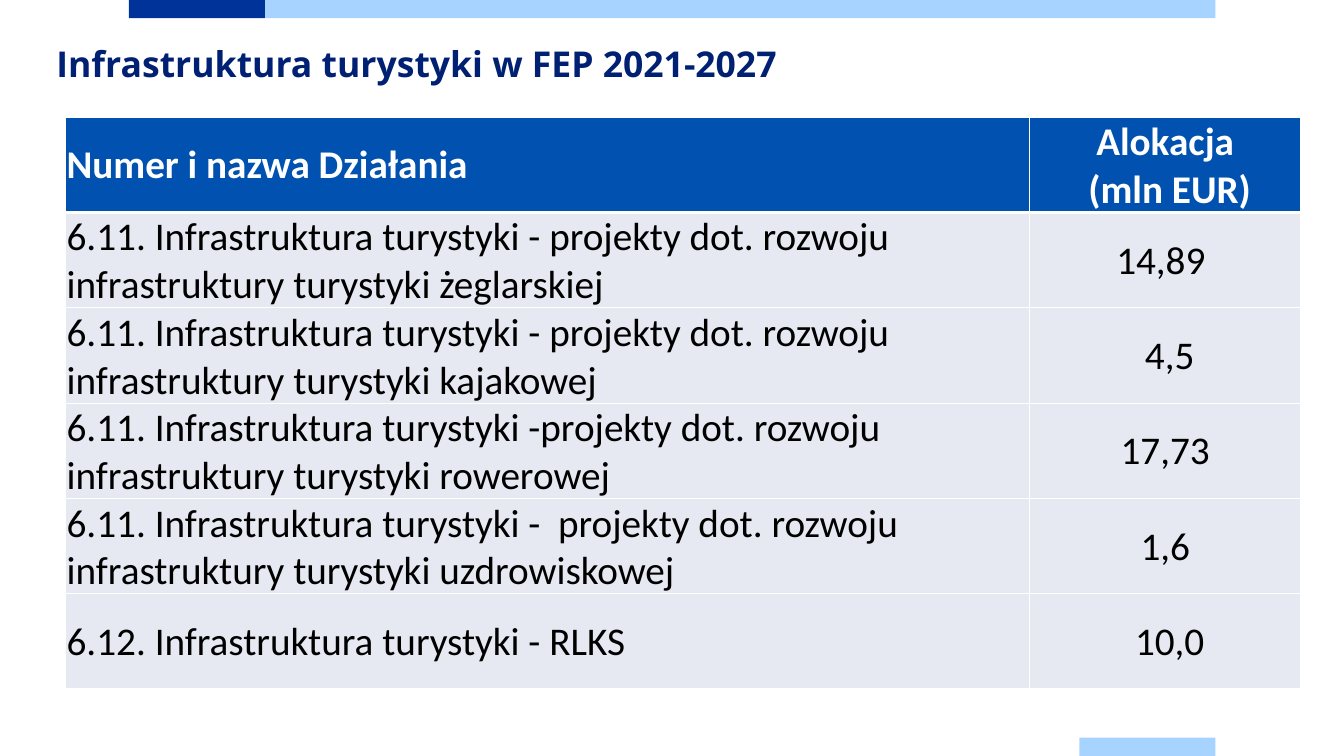
from dataclasses import dataclass

from lxml.etree import SubElement
from pptx import Presentation
from pptx.dml.color import RGBColor
from pptx.enum.shapes import MSO_SHAPE
from pptx.enum.text import MSO_ANCHOR as Anchor, PP_ALIGN as Align
from pptx.oxml.ns import qn
from pptx.slide import Slide
from pptx.table import _Cell as Cell
from pptx.util import Cm, Pt

NAVY, SKY, TITLE_BLUE = "003399", "A6D3FF", "002073"
HEADER_BLUE, ROW_GREY = "0051B0", "E7E9F2"
WHITE, BLACK = "FFFFFF", "000000"
COLUMN_WIDTHS = (24.3, 6.83)
ROW_HEIGHT = 2.39


@dataclass(frozen=True)
class Bar:
    left: float
    top: float
    width: float
    color: str
    height: float = 0.46


@dataclass(frozen=True)
class Row:
    name: str
    allocation: str


BARS = (
    Bar(3.25, 0, 3.43, NAVY),
    Bar(6.68, 0, 23.95, SKY),
    Bar(27.2, 18.59, 3.43, SKY),
)

ROWS = (
    Row("Numer i nazwa Działania", "Alokacja\n (mln EUR)"),
    Row("6.11. Infrastruktura turystyki - projekty dot. rozwoju "
        "infrastruktury turystyki żeglarskiej", "14,89 "),
    Row("6.11. Infrastruktura turystyki - projekty dot. rozwoju "
        "infrastruktury turystyki kajakowej", " 4,5"),
    Row("6.11. Infrastruktura turystyki -projekty dot. rozwoju "
        "infrastruktury turystyki rowerowej", "17,73"),
    Row("6.11. Infrastruktura turystyki -  projekty dot. rozwoju "
        "infrastruktury turystyki uzdrowiskowej", "1,6"),
    Row("6.12. Infrastruktura turystyki - RLKS", " 10,0"),
)


def rgb(color: str) -> RGBColor:
    return RGBColor.from_string(color)


def add_bar(slide: Slide, bar: Bar) -> None:
    shape = slide.shapes.add_shape(
        MSO_SHAPE.RECTANGLE, Cm(bar.left), Cm(bar.top), Cm(bar.width), Cm(bar.height))
    shape.shadow.inherit = False
    shape.fill.solid()
    shape.fill.fore_color.rgb = rgb(bar.color)
    shape.line.fill.background()


def add_title(slide: Slide, text: str) -> None:
    box = slide.shapes.add_textbox(Cm(1.42), Cm(0.99), Cm(31.01), Cm(2.72))
    frame = box.text_frame
    frame.word_wrap = True
    frame.margin_left = frame.margin_top = frame.margin_right = frame.margin_bottom = 0
    paragraph = frame.paragraphs[0]
    paragraph.text = text
    paragraph.line_spacing = Pt(32.7)
    font = paragraph.font
    font.name, font.size, font.bold = "Open Sans", Pt(25.4), True
    font.color.rgb = rgb(TITLE_BLUE)


def set_borders(cell: Cell, bottom: float, top: float) -> None:
    """Draw white borders; the widths are in points."""
    properties = cell._tc.get_or_add_tcPr()
    for index, (side, width) in enumerate(
            (("L", 1), ("R", 1), ("T", top), ("B", bottom))):
        line = properties.makeelement(qn(f"a:ln{side}"), {"w": str(Pt(width))})
        fill = SubElement(line, qn("a:solidFill"))
        SubElement(fill, qn("a:srgbClr"), val=WHITE)
        properties.insert(index, line)


def fill_cell(cell: Cell, text: str, alignment: Align, is_header: bool) -> None:
    cell.text = text
    cell.vertical_anchor = Anchor.MIDDLE
    cell.margin_left = cell.margin_top = cell.margin_right = Cm(0.03)
    cell.margin_bottom = 0
    cell.fill.solid()
    cell.fill.fore_color.rgb = rgb(HEADER_BLUE if is_header else ROW_GREY)
    for paragraph in cell.text_frame.paragraphs:
        paragraph.alignment = alignment
        font = paragraph.font
        font.name, font.size, font.bold = "Calibri", Pt(28), is_header
        font.color.rgb = rgb(WHITE if is_header else BLACK)


def add_allocation_table(slide: Slide) -> None:
    table = slide.shapes.add_table(
        len(ROWS), len(COLUMN_WIDTHS), Cm(1.65), Cm(2.95),
        Cm(sum(COLUMN_WIDTHS)), Cm(ROW_HEIGHT * len(ROWS))).table
    for column, width in zip(table.columns, COLUMN_WIDTHS):
        column.width = Cm(width)
    for index, row in enumerate(ROWS):
        table.rows[index].height = Cm(ROW_HEIGHT)
        texts = ((row.name, Align.LEFT), (row.allocation, Align.CENTER))
        for column_index, (text, alignment) in enumerate(texts):
            cell = table.cell(index, column_index)
            fill_cell(cell, text, alignment, is_header=index == 0)
            set_borders(cell, bottom=3 if index == 0 else 1,
                        top=3 if index == 1 else 1)


def main() -> None:
    presentation = Presentation()
    presentation.slide_width, presentation.slide_height = Cm(33.87), Cm(19.05)
    slide = presentation.slides.add_slide(presentation.slide_layouts[6])
    for bar in BARS:
        add_bar(slide, bar)
    add_title(slide, "Infrastruktura turystyki w FEP 2021-2027")
    add_allocation_table(slide)
    presentation.save("out.pptx")


if __name__ == "__main__":
    main()
